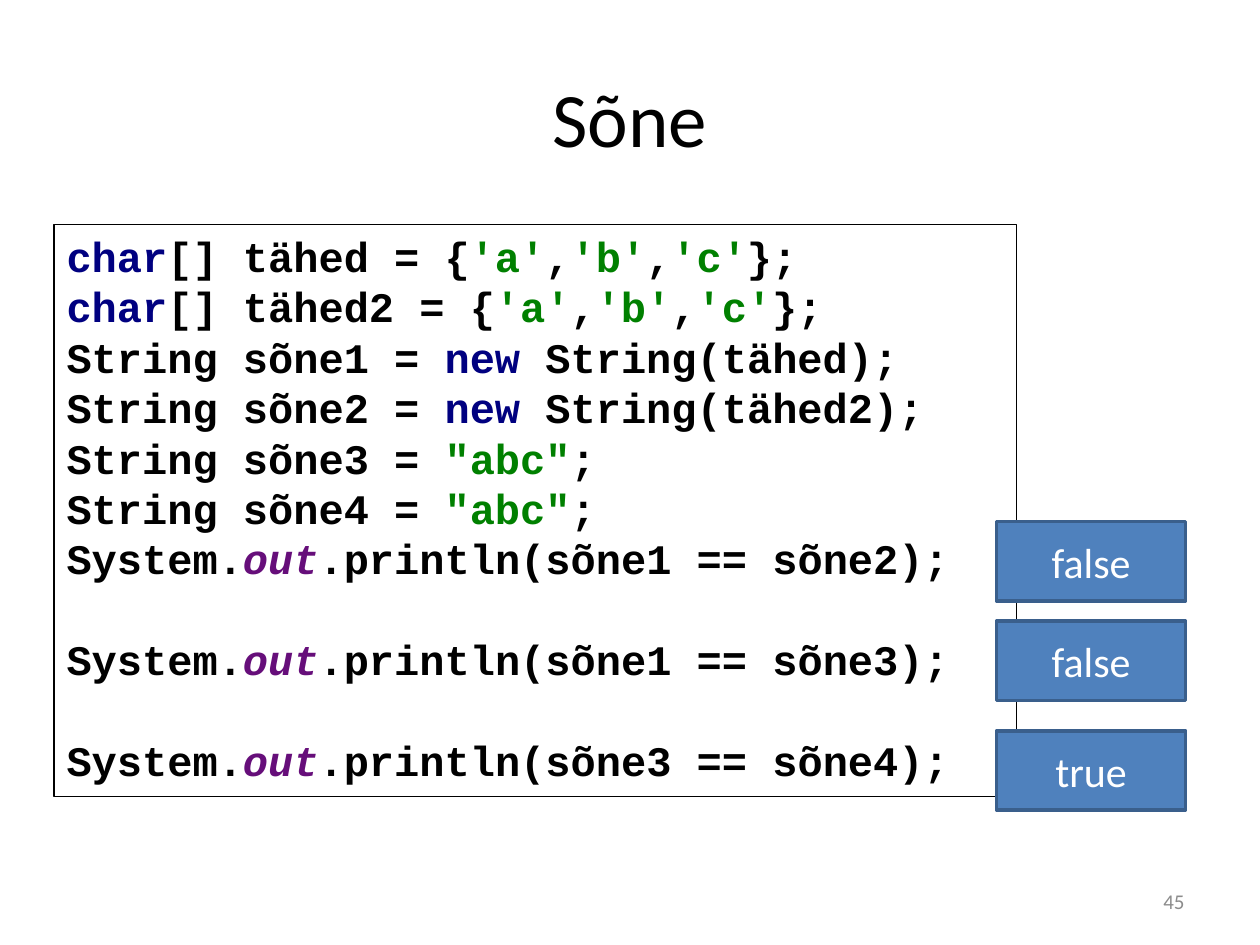
from pptx import Presentation
from pptx import util as u
from pptx.dml.color import RGBColor
from pptx.enum import shapes, text

BLACK, KEYWORD, LITERAL, FIELD = "000000", "000080", "008000", "660E7A"
TOKEN_COLORS = {"char": KEYWORD, "new ": KEYWORD, "'a'": LITERAL, "'b'": LITERAL,
                "'c'": LITERAL, '"abc"': LITERAL, "out": FIELD}
LINE_HEIGHT = u.Pt(28.8)

# "|" separates the tokens of a code line
DECLARATIONS = [
    "char|[] tähed = {|'a'|,|'b'|,|'c'|};",
    "char|[] tähed2 = {|'a'|,|'b'|,|'c'|};",
    "String sõne1 = |new |String(tähed);",
    "String sõne2 = |new |String(tähed2);",
    'String sõne3 = |"abc"|;',
    'String sõne4 = |"abc"|;',
]
COMPARISONS = [
    "System.|out|.println(sõne1 == sõne2);",
    "System.|out|.println(sõne1 == sõne3);",
    "System.|out|.println(sõne3 == sõne4);",
]


def rgb(value):
    return RGBColor.from_string(value)


def inches(box):
    return [u.Inches(length) for length in box]


def style(run, size, color, font="Calibri", bold=False, italic=False):
    run.font.size, run.font.name = u.Pt(size), font
    run.font.bold, run.font.italic = bold, italic
    run.font.color.rgb = rgb(color)


def write(frame, words, size, color, align):
    frame.text = words
    frame.word_wrap = True
    frame.vertical_anchor = text.MSO_ANCHOR.MIDDLE
    paragraph = frame.paragraphs[0]
    paragraph.alignment = align
    style(paragraph.runs[0], size, color)


def add_title(slide, box, words):
    title = slide.shapes.title
    title.left, title.top, title.width, title.height = inches(box)
    write(title.text_frame, words, 44, BLACK, text.PP_ALIGN.CENTER)


def add_page_number(slide, box, number):
    page = slide.shapes.add_textbox(*inches(box))
    write(page.text_frame, number, 12, "8C8C8C", text.PP_ALIGN.RIGHT)


def add_code(slide, box):
    code = slide.shapes.add_textbox(*inches(box))
    code.line.color.rgb = rgb(BLACK)
    code.line.width = u.Pt(0.75)
    frame = code.text_frame
    frame.word_wrap = True
    for index, line in enumerate(DECLARATIONS + COMPARISONS):
        paragraph = frame.add_paragraph() if index else frame.paragraphs[0]
        paragraph.line_spacing = LINE_HEIGHT
        # Later comparisons stand one line apart, beside their results
        if line in COMPARISONS[1:]:
            paragraph.space_before = LINE_HEIGHT
        for token in line.split("|"):
            run = paragraph.add_run()
            run.text = token
            color = TOKEN_COLORS.get(token, BLACK)
            style(run, 24, color, "Courier New", True, color == FIELD)


def add_result(slide, box, words):
    result = slide.shapes.add_shape(shapes.MSO_SHAPE.RECTANGLE, *inches(box))
    result.shadow.inherit = False
    result.fill.solid()
    result.fill.fore_color.rgb = rgb("4F81BD")
    result.line.color.rgb = rgb("3A5F8C")
    result.line.width = u.Pt(2)
    write(result.text_frame, words, 24, "FFFFFF", text.PP_ALIGN.CENTER)


def main():
    deck = Presentation()
    deck.slide_width, deck.slide_height = u.Inches(10), u.Inches(7.5)
    slide = deck.slides.add_slide(deck.slide_layouts[5])

    add_title(slide, (0.5, 0.3, 9, 1.25), "Sõne")
    add_page_number(slide, (7.17, 6.95, 2.33, 0.4), "45")
    add_code(slide, (0.43, 1.78, 7.64, 4.54))

    # Result of each comparison
    for top, value in ((4.14, "false"), (4.93, "false"), (5.8, "true")):
        add_result(slide, (7.91, top, 1.5, 0.63), value)

    deck.save("out.pptx")


if __name__ == "__main__":
    main()
